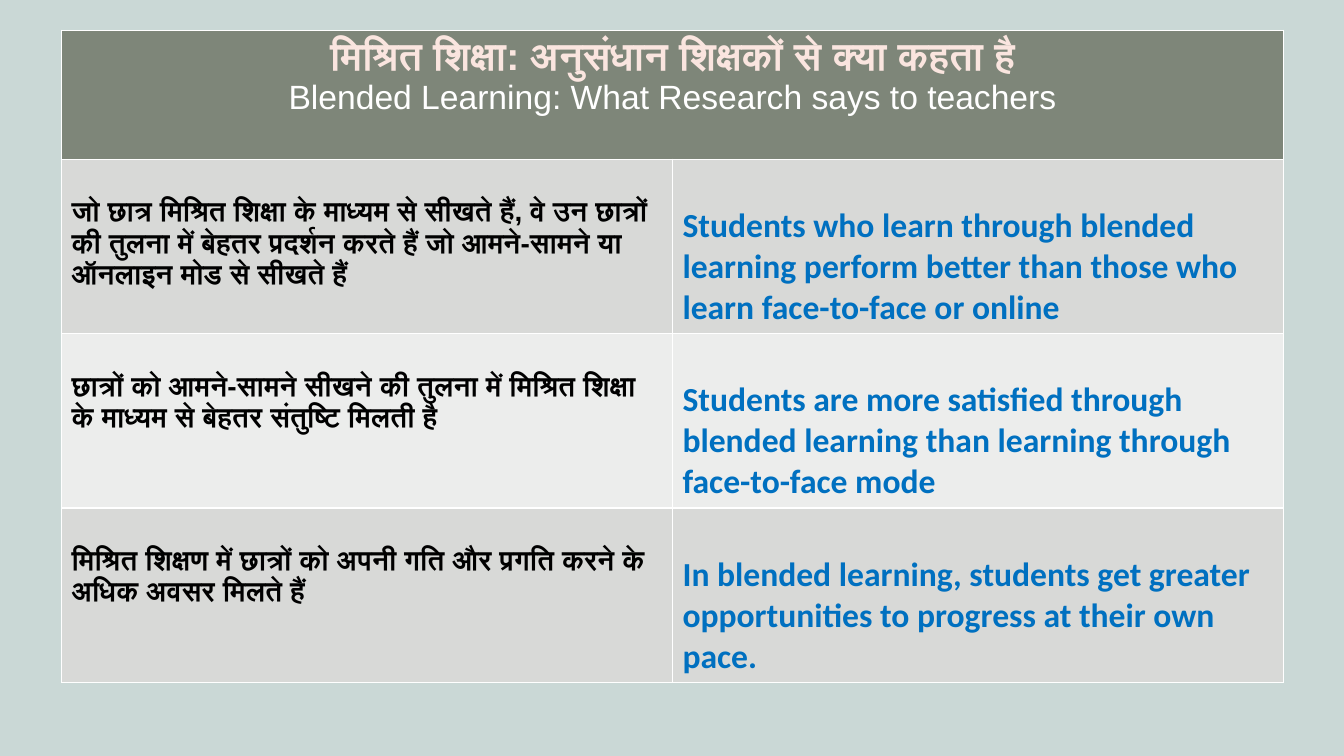
"""Build a slide with a bilingual table on blended learning research."""
from lxml import etree
from pptx import Presentation
from pptx.dml.color import RGBColor
from pptx.enum import text
from pptx.oxml import ns
from pptx.util import Inches, Pt

BACK = RGBColor(0xCA, 0xD8, 0xD6)
HEAD = RGBColor(0x7E, 0x86, 0x79)
BANDS = [RGBColor(0xD8, 0xD9, 0xD7), RGBColor(0xEC, 0xED, 0xEC)]
PINK = RGBColor(0xFA, 0xE5, 0xDF)
WHITE = RGBColor(0xFF, 0xFF, 0xFF)
BLACK = RGBColor(0x00, 0x00, 0x00)
BLUE = RGBColor(0x00, 0x70, 0xC0)

ROWS = [
    ("जो छात्र मिश्रित शिक्षा के माध्यम से सीखते हैं, वे उन छात्रों की तुलना में बेहतर प्रदर्शन करते हैं जो आमने-सामने या ऑनलाइन मोड से सीखते हैं",
     "Students who learn through blended learning perform better than those who learn face-to-face or online"),
    ("छात्रों को आमने-सामने सीखने की तुलना में मिश्रित शिक्षा के माध्यम से बेहतर संतुष्टि मिलती है",
     "Students are more satisfied through blended learning than learning through face-to-face mode"),
    ("मिश्रित शिक्षण में छात्रों को अपनी गति और प्रगति करने के अधिक अवसर मिलते हैं",
     "In blended learning, students get greater opportunities to progress at their own pace."),
]
STYLES = [("Arial", 20, BLACK, 0.37), ("Calibri", 24, BLUE, 0.46)]


def add_run(para, words, face, size, color, bold):
    run = para.add_run()
    run.text = words
    run.font.size = Pt(size)
    run.font.bold = bold
    run.font.color.rgb = color
    run.font.name = face
    etree.SubElement(run.font._element, ns.qn("a:cs"), typeface=face)


def paint(cell, color):
    props = cell._tc.get_or_add_tcPr()
    for side in ("L", "R", "T", "B"):
        line = etree.SubElement(props, ns.qn("a:ln" + side), w=str(Pt(1)))
        fill = etree.SubElement(line, ns.qn("a:solidFill"))
        etree.SubElement(fill, ns.qn("a:srgbClr"), val=str(WHITE))
    cell.fill.solid()
    cell.fill.fore_color.rgb = color


prs = Presentation()
prs.slide_width = Inches(13.33)
prs.slide_height = Inches(7.5)
slide = prs.slides.add_slide(prs.slide_layouts[6])
slide.background.fill.solid()
slide.background.fill.fore_color.rgb = BACK

table = slide.shapes.add_table(
    4, 2, Inches(0.61), Inches(0.3), Inches(12.12), Inches(6.46)).table
table.rows[0].height = Inches(1.28)
for col in table.columns:
    col.width = Inches(6.06)

title = table.cell(0, 0)
title.merge(table.cell(0, 1))
for cell in table.rows[0].cells:
    paint(cell, HEAD)
para = title.text_frame.paragraphs[0]
para.alignment = text.PP_ALIGN.CENTER
add_run(para, "मिश्रित शिक्षा: अनुसंधान शिक्षकों से क्या कहता है", "Arial", 28, PINK, True)
para.add_line_break()
add_run(para, "Blended Learning: What Research says to teachers", "Arial", 24, WHITE, False)

for r, pair in enumerate(ROWS):
    table.rows[r + 1].height = Inches(1.73)
    for c, (words, (face, size, color, top)) in enumerate(zip(pair, STYLES)):
        cell = table.cell(r + 1, c)
        paint(cell, BANDS[r % 2])
        cell.margin_top = Inches(top)
        add_run(cell.text_frame.paragraphs[0], words, face, size, color, True)

prs.save("out.pptx")
